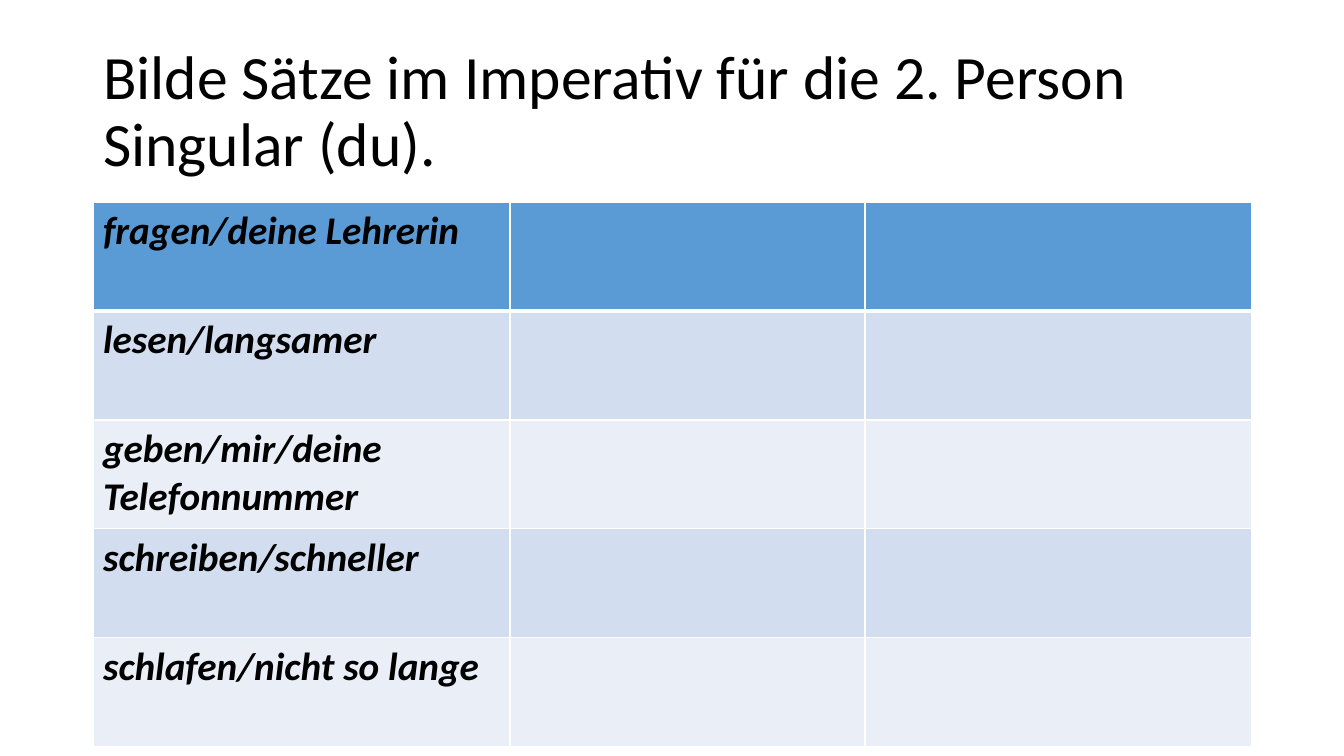
from lxml.etree import SubElement
from pptx import Presentation
from pptx.dml.color import RGBColor
from pptx.enum.text import MSO_ANCHOR, PP_ALIGN
from pptx.oxml.ns import qn
from pptx.util import Pt

# Content
TITLE = "Bilde Sätze im Imperativ für die 2. Person Singular (du)."
PROMPTS = [
    "fragen/deine Lehrerin",
    "lesen/langsamer",
    "geben/mir/deine Telefonnummer",
    "schreiben/schneller",
    "schlafen/nicht so lange",
]

# Layout in px
PX = 9072
SLIDE_W, SLIDE_H = 1344, 756
LEFT, WIDTH = 93, 1159
TITLE_TOP, TITLE_H = 40, 146
TABLE_TOP, ROW_H = 202, 109
COL_WIDTHS = [417, 355, 387]

# Style
FONT = "Calibri"
BLACK = RGBColor(0x00, 0x00, 0x00)
WHITE = RGBColor(0xFF, 0xFF, 0xFF)
HEADER = RGBColor(0x5B, 0x9B, 0xD5)
BANDS = [RGBColor(0xEA, 0xEF, 0xF7), RGBColor(0xD2, 0xDE, 0xEF)]


def write(p, text, size, bold=False, italic=False):
    r = p.add_run()
    r.text = text
    r.font.name, r.font.size = FONT, Pt(size)
    r.font.bold, r.font.italic = bold, italic
    r.font.color.rgb = BLACK


def set_borders(cell, top, bottom):
    tcPr = cell._tc.get_or_add_tcPr()
    widths = [("a:lnL", 1), ("a:lnR", 1), ("a:lnT", top), ("a:lnB", bottom)]
    for i, (tag, width) in enumerate(widths):
        ln = SubElement(tcPr, qn(tag), w=str(Pt(width)))
        fill = SubElement(ln, qn("a:solidFill"))
        SubElement(fill, qn("a:srgbClr"), val=str(WHITE))
        tcPr.insert(i, ln)  # borders come before the cell fill


prs = Presentation()
prs.slide_width, prs.slide_height = SLIDE_W * PX, SLIDE_H * PX
s = prs.slides.add_slide(prs.slide_layouts[5])

# Title
title = s.shapes.title
title.left, title.top = LEFT * PX, TITLE_TOP * PX
title.width, title.height = WIDTH * PX, TITLE_H * PX
tf = title.text_frame
tf.word_wrap = True
tf.vertical_anchor = MSO_ANCHOR.MIDDLE
p = tf.paragraphs[0]
p.alignment, p.line_spacing = PP_ALIGN.LEFT, 0.9
write(p, TITLE, 44)

# Exercise table: prompts on the left, empty cells for answers
table = s.shapes.add_table(
    len(PROMPTS), len(COL_WIDTHS), LEFT * PX, TABLE_TOP * PX,
    WIDTH * PX, ROW_H * len(PROMPTS) * PX).table
for col, width in zip(table.columns, COL_WIDTHS):
    col.width = width * PX
for i, (row, prompt) in enumerate(zip(table.rows, PROMPTS)):
    row.height = ROW_H * PX
    for cell in row.cells:
        cell.fill.solid()
        cell.fill.fore_color.rgb = BANDS[i % 2] if i else HEADER
        set_borders(cell, top=3 if i == 1 else 1, bottom=1 if i else 3)
    write(row.cells[0].text_frame.paragraphs[0], prompt, 28, True, True)

prs.save("out.pptx")
